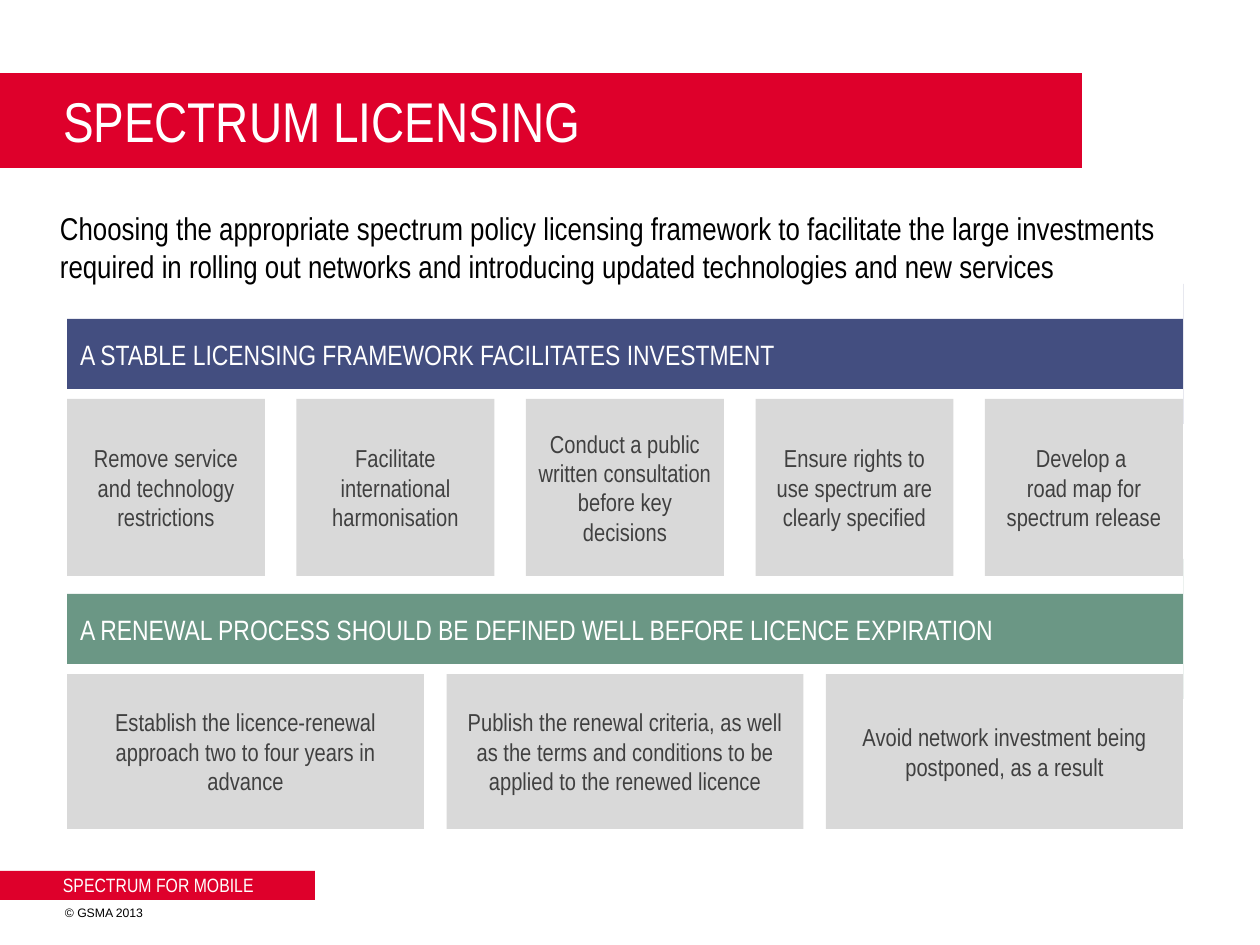
import dataclasses

import pptx
import pptx.dml.color
import pptx.enum.shapes
import pptx.enum.text
import pptx.util

KIND = pptx.enum.shapes.MSO_SHAPE
ALIGN = pptx.enum.text.PP_ALIGN
MID = pptx.enum.text.MSO_ANCHOR.MIDDLE
TOP = pptx.enum.text.MSO_ANCHOR.TOP
SCALE = 914400 / 126  # EMU in one px


@dataclasses.dataclass(frozen=True)
class Theme:
    red: str = "DE002B"
    blue: str = "434E80"
    green: str = "6B9785"
    card: str = "D9D9D9"
    ink: str = "404040"
    white: str = "FFFFFF"
    black: str = "000000"
    font: str = "Arial Narrow"
    plain: str = "Arial"
    title: int = 32
    lead: int = 18
    band: int = 16
    body: int = 14
    tag: int = 11
    note: int = 7


def emu(px):
    return pptx.util.Emu(round(px * SCALE))


def rgb(code):
    return pptx.dml.color.RGBColor.from_string(code)


class Deck:
    def __init__(self, theme):
        self.theme = theme
        self.prs = pptx.Presentation()
        self.prs.slide_width, self.prs.slide_height = emu(1260), emu(945)
        self.slide = self.prs.slides.add_slide(self.prs.slide_layouts[5])

    def fill_text(self, shape, text, size, color, font=None,
                  align=ALIGN.LEFT, anchor=MID, pad=(0, 0, 0, 0)):
        frame = shape.text_frame
        frame.word_wrap = True
        frame.auto_size = pptx.enum.text.MSO_AUTO_SIZE.NONE
        frame.vertical_anchor = anchor
        (frame.margin_left, frame.margin_top,
         frame.margin_right, frame.margin_bottom) = map(emu, pad)
        para = frame.paragraphs[0]
        para.alignment = align
        for i, line in enumerate(text.split("\n")):
            if i:
                para.add_line_break()
            run = para.add_run()
            run.text = line
            run.font.size = pptx.util.Pt(size)
            run.font.name = font or self.theme.font
            run.font.color.rgb = rgb(color)

    def title(self, text, *box):
        shape = self.slide.shapes.title
        shape.left, shape.top, shape.width, shape.height = map(emu, box)
        self.fill_text(shape, text, self.theme.title, self.theme.white)

    def label(self, text, box, size, color, **style):
        shape = self.slide.shapes.add_textbox(*map(emu, box))
        self.fill_text(shape, text, size, color, **style)

    def block(self, box, fill, kind=KIND.RECTANGLE):
        shape = self.slide.shapes.add_shape(kind, *map(emu, box))
        shape.shadow.inherit = False
        shape.fill.solid()
        shape.fill.fore_color.rgb = rgb(fill)
        shape.line.fill.background()
        return shape

    def band(self, text, box, fill):
        shape = self.block(box, fill, KIND.RIGHT_ARROW)
        shape.adjustments[0], shape.adjustments[1] = 0.5, 0
        self.fill_text(shape, text, self.theme.band, self.theme.white,
                       pad=(13, 6, 13, 6))

    def cards(self, texts, left, top, span, width, height):
        step = (span - width) / (len(texts) - 1)
        for i, text in enumerate(texts):
            shape = self.block((left + i * step, top, width, height),
                               self.theme.card)
            self.fill_text(shape, text, self.theme.body, self.theme.ink,
                           align=ALIGN.CENTER, pad=(10, 6, 10, 6))


def main():
    theme = Theme()
    deck = Deck(theme)
    left, span = 67, 1116

    # Title bar; the placeholder is moved in front of it
    bar = deck.block((-4, 73, 1086, 95), theme.red)
    deck.title("SPECTRUM LICENSING", 63, 73, 1019, 95)
    bar.element.addnext(deck.slide.shapes.title.element)

    # Footer
    deck.block((-4, 871, 319, 29), theme.red)
    deck.label("SPECTRUM FOR MOBILE", (63, 871, 377, 28), theme.tag,
               theme.white)
    deck.label("© GSMA 2013", (52, 902, 199, 21), theme.note, theme.black,
               font=theme.plain, pad=(13, 0, 0, 0))

    # Licensing framework
    deck.band("A STABLE LICENSING FRAMEWORK FACILITATES INVESTMENT",
              (left, 284, span, 140), theme.blue)
    deck.cards(["Remove service and technology restrictions",
                "Facilitate international harmonisation",
                "Conduct a public written consultation before key decisions",
                "Ensure rights to use spectrum are clearly specified",
                "Develop a \nroad map for spectrum release"],
               left, 399, span, 198, 177)

    # Renewal process
    deck.band("A RENEWAL PROCESS SHOULD BE DEFINED WELL BEFORE LICENCE "
              "EXPIRATION", (left, 559, span, 140), theme.green)
    deck.cards(["Establish the licence-renewal approach two to four years "
                "in advance",
                "Publish the renewal criteria, as well as the terms and "
                "conditions to be applied to the renewed licence",
                "Avoid network investment being postponed, as a result"],
               left, 674, span, 357, 155)

    # Lead sentence
    deck.label("Choosing the appropriate spectrum policy licensing framework "
               "to facilitate the large investments required in rolling out "
               "networks and introducing updated technologies and new "
               "services", (47, 203, 1193, 89), theme.lead, theme.black,
               anchor=TOP, pad=(13, 6, 13, 6))

    deck.prs.save("out.pptx")


if __name__ == "__main__":
    main()
